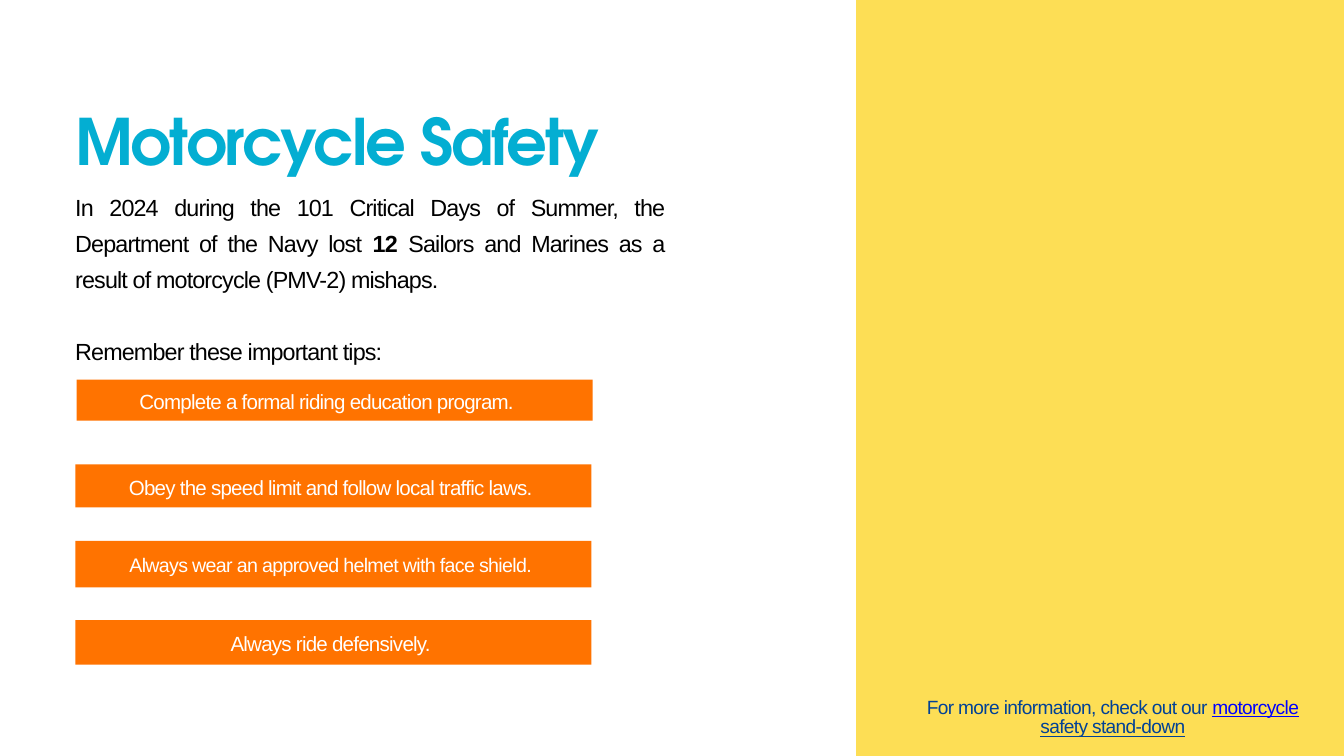
from pptx import Presentation
from pptx.dml.color import RGBColor
from pptx.enum.shapes import MSO_SHAPE
from pptx.enum.text import PP_ALIGN
from pptx.util import Inches, Pt

COLORS = {
    "white": "FFFFFF",
    "black": "000000",
    "yellow": "FDDE55",
    "cyan": "03AED2",
    "orange": "FF7300",
    "navy": "014196",
    "link": "0000FF",
}

TIPS = [
    ("Complete a formal riding education program.", 0.02, 4.53, 0.61, 0.02, 0.08, 22, -0.8),
    ("Obey the speed limit and follow local traffic laws.", 0, 5.79, 0.64, 0.08, 0.1, 22, -0.8),
    ("Always wear an approved helmet with face shield.", 0, 6.93, 0.69, 0.08, 0.12, 21, -0.7),
    ("Always ride defensively.", 0, 8.11, 0.66, 0.08, 0.1, 22, -0.8),
]


def add_block(s, x, y, w, h, color):
    sp = s.shapes.add_shape(MSO_SHAPE.RECTANGLE, Inches(x), Inches(y), Inches(w), Inches(h))
    sp.shadow.inherit = False
    sp.fill.solid()
    sp.fill.fore_color.rgb = RGBColor.from_string(COLORS[color])
    sp.line.fill.background()


def add_text_frame(s, x, y, w, h):
    tf = s.shapes.add_textbox(Inches(x), Inches(y), Inches(w), Inches(h)).text_frame
    tf.word_wrap = True
    tf.margin_left = tf.margin_right = tf.margin_top = tf.margin_bottom = 0
    return tf


def format_paragraph(p, align, leading):
    p.alignment = align
    p.line_spacing = Pt(leading)


def add_run(p, text, size, color, spacing, font="Arial", bold=False, underline=False):
    r = p.add_run()
    r.text = text
    r.font.name = font
    r.font.size = Pt(size)
    r.font.bold = bold
    r.font.underline = underline
    r.font.color.rgb = RGBColor.from_string(COLORS[color])
    r._r.get_or_add_rPr().set("spc", str(round(spacing * 100)))


def add_side_panel(s, x, y, w, h):
    add_block(s, x, y, w, h, "yellow")
    p = add_text_frame(s, x + 1.03, y + h - 0.84, 5.58, 0.59).paragraphs[0]
    format_paragraph(p, PP_ALIGN.CENTER, 20.5)
    add_run(p, "For more information, check out our ", 20.5, "navy", -0.7)
    add_run(p, "motorcycle", 20.5, "link", -0.7, underline=True)
    add_run(p, " safety stand-down", 20.5, "navy", -0.7, underline=True)


def add_intro(s, x, y, w):
    p = add_text_frame(s, x, y, w, 1.15).paragraphs[0]
    format_paragraph(p, PP_ALIGN.JUSTIFY, 68.6)
    add_run(p, "Motorcycle Safety", 68.6, "cyan", -2.3, "TeX Gyre Adventor", True)

    tf = add_text_frame(s, x, y + 1.06, w, 3.16)
    p = tf.paragraphs[0]
    format_paragraph(p, PP_ALIGN.JUSTIFY, 38.5)
    add_run(p, "In 2024 during the 101 Critical Days of Summer, the Department of the Navy lost ",
            25, "black", -0.9)
    add_run(p, "12", 25, "black", -0.9, bold=True)
    add_run(p, " Sailors and Marines as a result of motorcycle (PMV-2) mishaps.", 25, "black", -0.9)
    p = tf.add_paragraph()
    format_paragraph(p, PP_ALIGN.JUSTIFY, 38.5)
    p.space_before = Pt(38.5)
    add_run(p, "Remember these important tips:", 25, "black", -0.9)


def add_tips(s, x, y):
    for text, bar_x, bar_y, bar_h, text_x, text_y, size, spacing in TIPS:
        top = y + bar_y - TIPS[0][2]
        add_block(s, x + bar_x, top, 7.68, bar_h, "orange")
        p = add_text_frame(s, x + text_x, top + text_y, 7.44, 0.41).paragraphs[0]
        format_paragraph(p, PP_ALIGN.CENTER, size * 1.4)
        add_run(p, text, size, "white", spacing)


def main():
    prs = Presentation()
    prs.slide_width = Inches(20)
    prs.slide_height = Inches(11.25)
    s = prs.slides.add_slide(prs.slide_layouts[6])
    s.background.fill.solid()
    s.background.fill.fore_color.rgb = RGBColor.from_string(COLORS["white"])
    add_side_panel(s, 12.74, 0, 7.26, 11.25)
    add_intro(s, 1.12, 1.7, 8.77)
    add_tips(s, 1.12, 5.65)
    prs.save("out.pptx")


if __name__ == "__main__":
    main()
